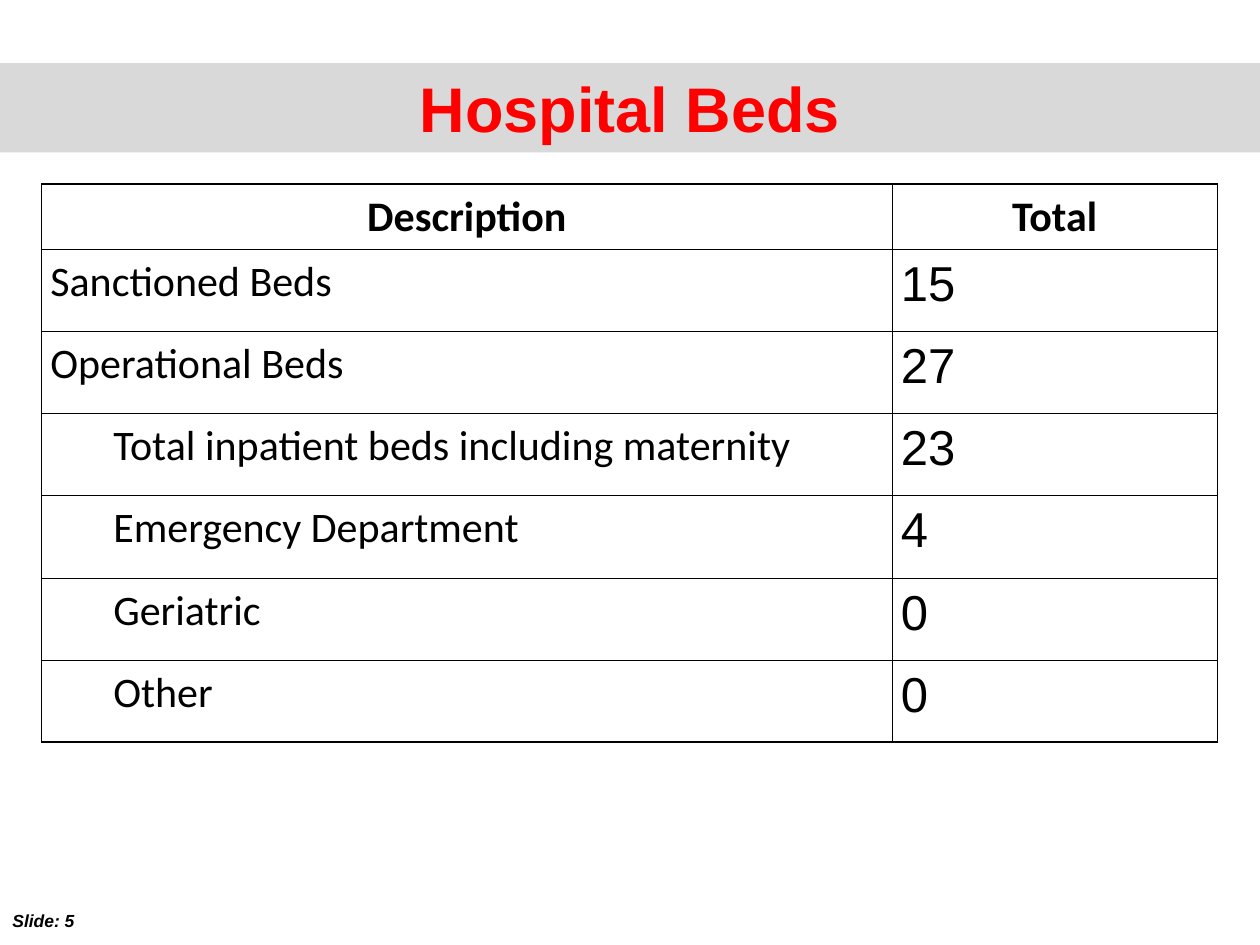
from lxml.etree import SubElement
from pptx import Presentation
from pptx.dml.color import RGBColor
from pptx.enum.shapes import MSO_SHAPE
from pptx.enum.text import MSO_ANCHOR, PP_ALIGN
from pptx.oxml.ns import qn
from pptx.util import Inches, Pt

BLACK = RGBColor(0, 0, 0)
WHITE = RGBColor(255, 255, 255)
RED = RGBColor(255, 0, 0)
BAND_GREY = RGBColor(0xD9, 0xD9, 0xD9)

BEDS = [
    ("Description", "Total", 0),
    ("Sanctioned Beds", "15", 0),
    ("Operational Beds", "27", 0),
    ("Total inpatient beds including maternity", "23", 1),
    ("Emergency Department", "4", 1),
    ("Geriatric", "0", 1),
    ("Other", "0", 1),
]
COLUMN_WIDTHS = [6.75, 2.58]
ROW_HEIGHTS = [0.52, 0.65, 0.65, 0.65, 0.66, 0.65, 0.65]


def set_font(paragraph, name, size, color=BLACK, bold=False, italic=False):
    """Style a whole paragraph."""
    font = paragraph.font
    font.name, font.size = name, Pt(size)
    font.bold, font.italic = bold, italic
    font.color.rgb = color


def add_title_band(slide, left, top, width, height):
    """Draw the grey band with the centred title."""
    band = slide.shapes.add_shape(
        MSO_SHAPE.RECTANGLE, Inches(left), Inches(top), Inches(width), Inches(height))
    band.shadow.inherit = False
    band.fill.solid()
    band.fill.fore_color.rgb = BAND_GREY
    band.line.fill.background()
    band.text_frame.vertical_anchor = MSO_ANCHOR.MIDDLE
    title = band.text_frame.paragraphs[0]
    title.text = "Hospital Beds"
    title.alignment = PP_ALIGN.CENTER
    set_font(title, "Arial", 36, RED, bold=True)


def add_borders(cell):
    """Give a cell thin black borders on all four sides."""
    properties = cell._tc.get_or_add_tcPr()
    for side in ("a:lnL", "a:lnR", "a:lnT", "a:lnB"):
        border = SubElement(properties, qn(side), w=str(Pt(0.75)))
        fill = SubElement(border, qn("a:solidFill"))
        SubElement(fill, qn("a:srgbClr"), val=str(BLACK))


def fill_cell(cell, text, font_name, size, header, level):
    """Write and style one table cell."""
    add_borders(cell)
    cell.fill.solid()
    cell.fill.fore_color.rgb = WHITE
    cell.margin_left = cell.margin_right = Inches(0.07)
    cell.margin_top = cell.margin_bottom = 0
    entry = cell.text_frame.paragraphs[0]
    entry.text = text
    entry.line_spacing = 1.15
    entry.alignment = PP_ALIGN.CENTER if header else PP_ALIGN.LEFT
    set_font(entry, font_name, size, bold=header)
    if level:
        entry.level = level
        indent = entry._p.get_or_add_pPr()
        indent.set("marL", str(Inches(0.5 * level)))
        indent.set("indent", "0")


def add_beds_table(slide, left, top, width, height):
    """Build the table of bed counts."""
    beds = slide.shapes.add_table(
        len(BEDS), len(COLUMN_WIDTHS),
        Inches(left), Inches(top), Inches(width), Inches(height)).table
    beds.horz_banding = False
    for column, column_width in zip(beds.columns, COLUMN_WIDTHS):
        column.width = Inches(column_width)
    for index, (description, total, level) in enumerate(BEDS):
        beds.rows[index].height = Inches(ROW_HEIGHTS[index])
        header = index == 0
        total_font = ("Calibri", 24) if header else ("Arial", 28)
        fill_cell(beds.cell(index, 0), description, "Calibri", 24, header, level)
        fill_cell(beds.cell(index, 1), total, *total_font, header, 0)


def add_slide_number(slide, left, top, width, height):
    """Write the slide number in the bottom corner."""
    frame = slide.shapes.add_textbox(
        Inches(left), Inches(top), Inches(width), Inches(height)).text_frame
    frame.word_wrap = True
    number = frame.paragraphs[0]
    number.text = "Slide: 5"
    set_font(number, "Arial", 10, bold=True, italic=True)


def main():
    """Build and save the slide."""
    deck = Presentation()
    deck.slide_width, deck.slide_height = Inches(10), Inches(7.5)
    slide = deck.slides.add_slide(deck.slide_layouts[6])
    add_slide_number(slide, 0, 7.17, 0.92, 0.27)
    add_title_band(slide, 0, 0.5, 10, 0.71)
    add_beds_table(slide, 0.33, 1.46, sum(COLUMN_WIDTHS), sum(ROW_HEIGHTS))
    deck.save("out.pptx")


if __name__ == "__main__":
    main()
